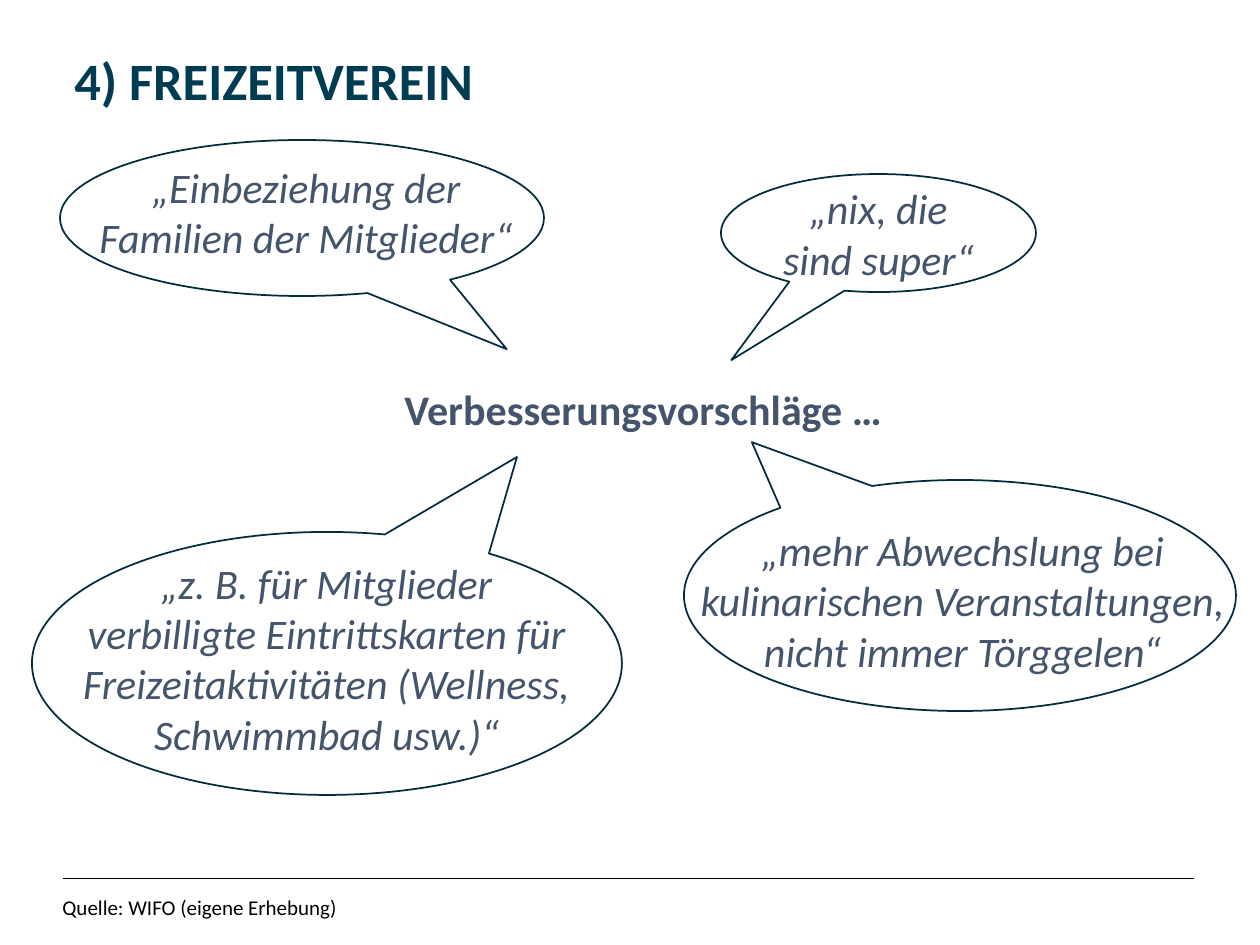
from lxml import etree
from pptx import Presentation
from pptx.dml.color import RGBColor
from pptx.enum import shapes as sh, text as tx
from pptx import util as u
from pptx.oxml.ns import qn

PX = 914400 // 126
NAVY = RGBColor(0x00, 0x3C, 0x51)
EDGE = RGBColor(0x00, 0x2C, 0x3C)
SLATE = RGBColor(0x44, 0x54, 0x6A)
BLACK = RGBColor(0, 0, 0)
WHITE = RGBColor(255, 255, 255)

# Content: boxes are left, top, width, height in px
TITLE = ("4) FREIZEITVEREIN", (62, 49, 1155, 63))
SOURCE = ("Quelle: WIFO (eigene Erhebung)", (50, 886, 751, 45))
TOPIC = ("Verbesserungsvorschläge …", (392, 377, 536, 63))
RULE = (63, 878, 1194, 878)
# Quote, bubble, pointer tip, text box (None: text sits in the bubble)
QUOTES = [
    ("„nix, die sind super“", (721, 174, 315, 118), (-0.467, 1.077), None),
    ("„Einbeziehung der Familien der Mitglieder“",
     (60, 140, 484, 156), (0.423, 0.841), (83, 155, 446, 115)),
    ("„z. B. für Mitglieder verbilligte Eintrittskarten für "
     "Freizeitaktivitäten (Wellness, Schwimmbad usw.)“",
     (32, 532, 590, 263), (0.322, -0.785), (64, 551, 525, 217)),
    ("„mehr Abwechslung bei kulinarischen Veranstaltungen, "
     "nicht immer Törggelen“",
     (684, 480, 552, 231), (-0.377, -0.664), (679, 518, 567, 146)),
]


def scale(box):
    return [n * PX for n in box]


def write(frame, words, size=24, color=SLATE, bold=False, italic=False,
          align=tx.PP_ALIGN.LEFT, anchor=tx.MSO_ANCHOR.TOP, gap=1.0):
    frame.word_wrap = True
    frame.vertical_anchor = anchor
    para = frame.paragraphs[0]
    para.alignment = align
    para.line_spacing = gap
    run = para.add_run()
    run.text = words
    font = run.font
    font.name, font.size = "Calibri", u.Pt(size)
    font.bold, font.italic = bold, italic
    font.color.rgb = color


def label(item, **style):
    words, box = item
    write(slide.shapes.add_textbox(*scale(box)).text_frame, words, **style)


def bubble(box, tip):
    shape = slide.shapes.add_shape(
        sh.MSO_SHAPE.OVAL_CALLOUT, *scale(box))
    shape.shadow.inherit = False
    shape.adjustments[0], shape.adjustments[1] = tip
    shape.fill.solid()
    shape.fill.fore_color.rgb = WHITE
    shape.line.color.rgb = EDGE
    shape.line.width = u.Pt(1)
    return shape


deck = Presentation()
deck.slide_width, deck.slide_height = scale((1260, 945))
slide = deck.slides.add_slide(deck.slide_layouts[6])

# Footer rule
rule = slide.shapes.add_connector(sh.MSO_CONNECTOR.STRAIGHT, *scale(RULE))
rule.line.color.rgb = BLACK
rule.line.width = u.Pt(0.5)
etree.SubElement(rule.element.spPr, qn("a:effectLst"))

# Title, source and topic
label(TITLE, size=30, color=NAVY, bold=True, gap=0.9)
label(SOURCE, size=12, color=BLACK, anchor=tx.MSO_ANCHOR.MIDDLE, gap=0.9)
label(TOPIC, bold=True)

# Speech bubbles
for words, box, tip, area in QUOTES:
    shape = bubble(box, tip)
    look = dict(italic=True, align=tx.PP_ALIGN.CENTER)
    if area:
        label((words, area), **look)
    else:
        write(shape.text_frame, words, anchor=tx.MSO_ANCHOR.MIDDLE, **look)

deck.save("out.pptx")
